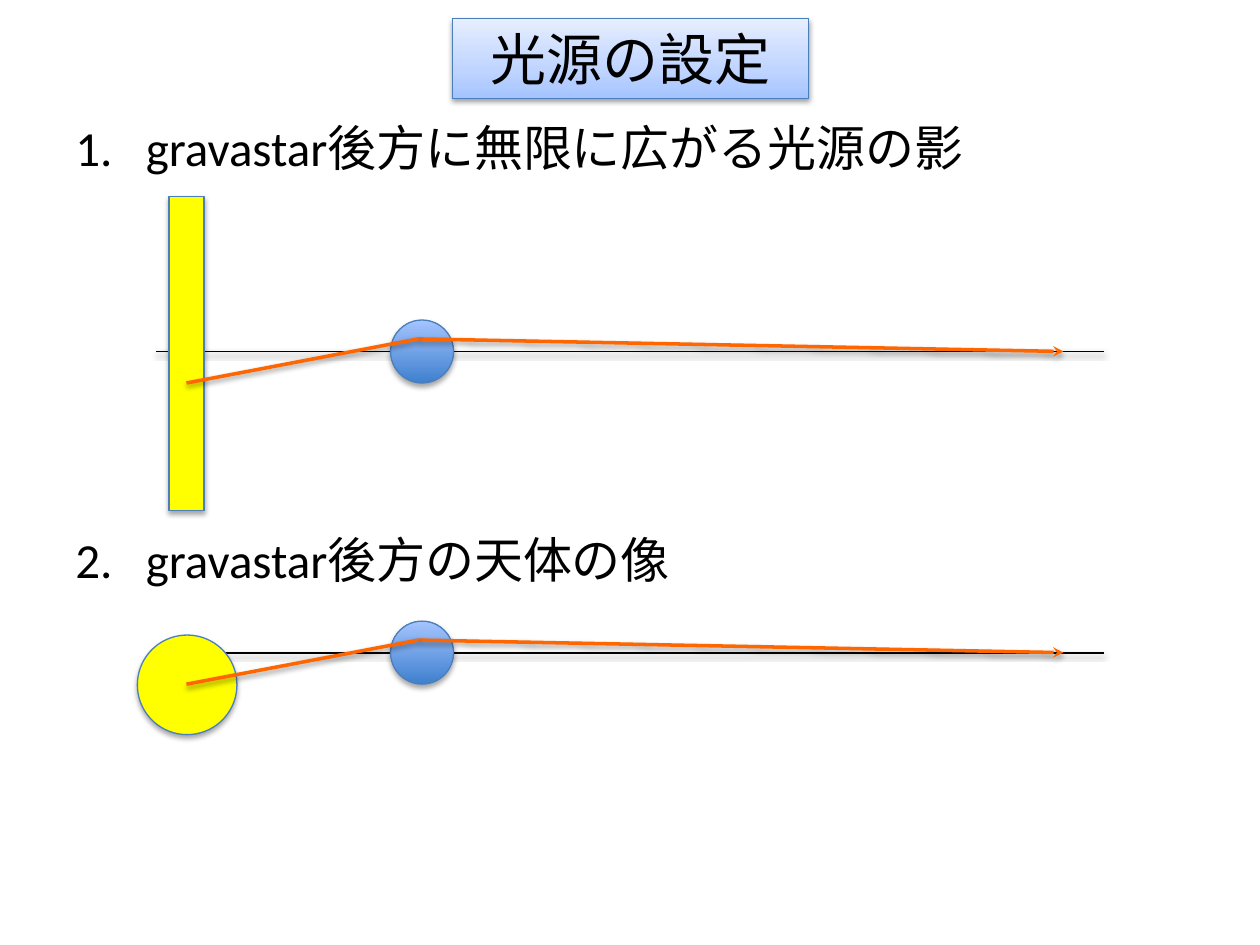
from dataclasses import dataclass

from lxml import etree
from pptx import Presentation
from pptx.dml.color import RGBColor
from pptx.enum.shapes import MSO_CONNECTOR, MSO_SHAPE
from pptx.enum.text import MSO_ANCHOR, PP_ALIGN
from pptx.oxml.ns import qn
from pptx.util import Inches, Pt

RECT, OVAL = MSO_SHAPE.RECTANGLE, MSO_SHAPE.OVAL
STRAIGHT = MSO_CONNECTOR.STRAIGHT
CENTER, MIDDLE = PP_ALIGN.CENTER, MSO_ANCHOR.MIDDLE
FONT = "Calibri"
COLORS = {
    "text": "000000",
    "axis": "000000",
    "outline": "4B7EBC",
    "source": "FFFF00",
    "ray": "FF6600",
    "shadow": "000000",
}
TITLE_STOPS = ((0, "A4C4FF"), (35, "BFD4FF"), (100, "E6EEFF"))
STAR_STOPS = ((0, "3F80CE"), (100, "A4C4FF"))
AXIS_X = (1.24, 8.76)
SOURCE_X, BEND_X, OBSERVER_X = 1.48, 3.32, 8.44
STAR_LEFT, STAR_SIZE = 3.1, 0.5
BEND_RISE, SOURCE_DROP = 0.1, 0.25


@dataclass
class Box:
    left: float
    top: float
    width: float
    height: float

    def lengths(self) -> list:
        return [Inches(v) for v in (self.left, self.top, self.width, self.height)]


@dataclass
class Scene:
    number: int
    heading: str
    heading_top: float
    axis_y: float
    source_kind: MSO_SHAPE
    source_box: Box


SCENES = [
    Scene(1, "gravastar後方に無限に広がる光源の影", 0.88, 2.79,
          RECT, Box(1.34, 1.56, 0.28, 2.49)),
    Scene(2, "gravastar後方の天体の像", 4.15, 5.18,
          OVAL, Box(1.09, 5.04, 0.79, 0.79)),
]


def rgb(name: str) -> RGBColor:
    return RGBColor.from_string(COLORS[name])


def add_node(parent, tag: str, **attrs):
    node = etree.SubElement(parent, qn(tag))
    for key, value in attrs.items():
        node.set(key, str(value))
    return node


def add_shadow(s, opacity: int, distance: float) -> None:
    """Add a soft shadow straight below; call after fill and line are set."""
    effects = add_node(s._element.spPr, "a:effectLst")
    shadow = add_node(effects, "a:outerShdw", blurRad=Pt(3.1), dist=Pt(distance),
                      dir=5400000, rotWithShape=0)
    color = add_node(shadow, "a:srgbClr", val=COLORS["shadow"])
    add_node(color, "a:alpha", val=opacity * 1000)


def fill_gradient(s, stops: tuple) -> None:
    """Fill from bottom to top; call before the line is set."""
    fill = add_node(s._element.spPr, "a:gradFill", rotWithShape=1)
    stop_list = add_node(fill, "a:gsLst")
    for percent, color in stops:
        stop = add_node(stop_list, "a:gs", pos=percent * 1000)
        add_node(stop, "a:srgbClr", val=color)
    add_node(fill, "a:lin", ang=16200000, scaled=0)


def add_body(slide, kind: MSO_SHAPE, box: Box, stops: tuple = (),
             opacity: int = 35, distance: float = 1.8):
    """Draw an outlined shape, yellow unless gradient stops are given."""
    s = slide.shapes.add_shape(kind, *box.lengths())
    if stops:
        fill_gradient(s, stops)
    else:
        s.fill.solid()
        s.fill.fore_color.rgb = rgb("source")
    s.line.color.rgb = rgb("outline")
    s.line.width = Pt(0.75)
    add_shadow(s, opacity, distance)
    return s


def add_line(slide, start: tuple, end: tuple, color: str, width: float,
             arrow: bool = False) -> None:
    s = slide.shapes.add_connector(STRAIGHT, *[Inches(v) for v in start + end])
    s.line.color.rgb = rgb(color)
    s.line.width = Pt(width)
    if arrow:
        add_node(s.line._get_or_add_ln(), "a:tailEnd", type="stealth")
    add_shadow(s, 38, 1.6)


def write_text(p, text: str, size: int) -> None:
    r = p.add_run()
    r.text = text
    r.font.color.rgb = rgb("text")
    for name, value in {"name": FONT, "size": Pt(size)}.items():
        setattr(r.font, name, value)


def add_title(slide, text: str) -> None:
    s = add_body(slide, RECT, Box(3.59, 0.15, 2.83, 0.63), TITLE_STOPS, 38, 1.6)
    tf = s.text_frame
    tf.vertical_anchor = MIDDLE
    p = tf.paragraphs[0]
    p.alignment = CENTER
    write_text(p, text, 32)


def add_heading(slide, scene: Scene) -> None:
    box = Box(0.5, scene.heading_top, 9, 0.62)
    tf = slide.shapes.add_textbox(*box.lengths()).text_frame
    tf.word_wrap = True
    p = tf.paragraphs[0]
    write_text(p, scene.heading, 28)
    props = p._p.get_or_add_pPr()
    indent = Inches(0.56)
    props.set("marL", str(indent))
    props.set("indent", str(-indent))
    add_node(props, "a:buFont", typeface=FONT)
    add_node(props, "a:buAutoNum", type="arabicPeriod", startAt=scene.number)


def add_scene(slide, scene: Scene) -> None:
    y = scene.axis_y
    bend = (BEND_X, y - BEND_RISE)
    add_heading(slide, scene)
    add_line(slide, (AXIS_X[0], y), (AXIS_X[1], y), "axis", 1)
    star = Box(STAR_LEFT, y - STAR_SIZE / 2, STAR_SIZE, STAR_SIZE)
    add_body(slide, OVAL, star, STAR_STOPS)
    add_body(slide, scene.source_kind, scene.source_box)
    add_line(slide, bend, (OBSERVER_X, y), "ray", 2, arrow=True)
    add_line(slide, (SOURCE_X, y + SOURCE_DROP), bend, "ray", 2)


def main() -> None:
    prs = Presentation()
    prs.slide_width, prs.slide_height = Inches(10), Inches(7.5)
    slide = prs.slides.add_slide(prs.slide_layouts[6])
    add_title(slide, "光源の設定")
    for scene in SCENES:
        add_scene(slide, scene)
    prs.save("out.pptx")


if __name__ == "__main__":
    main()
